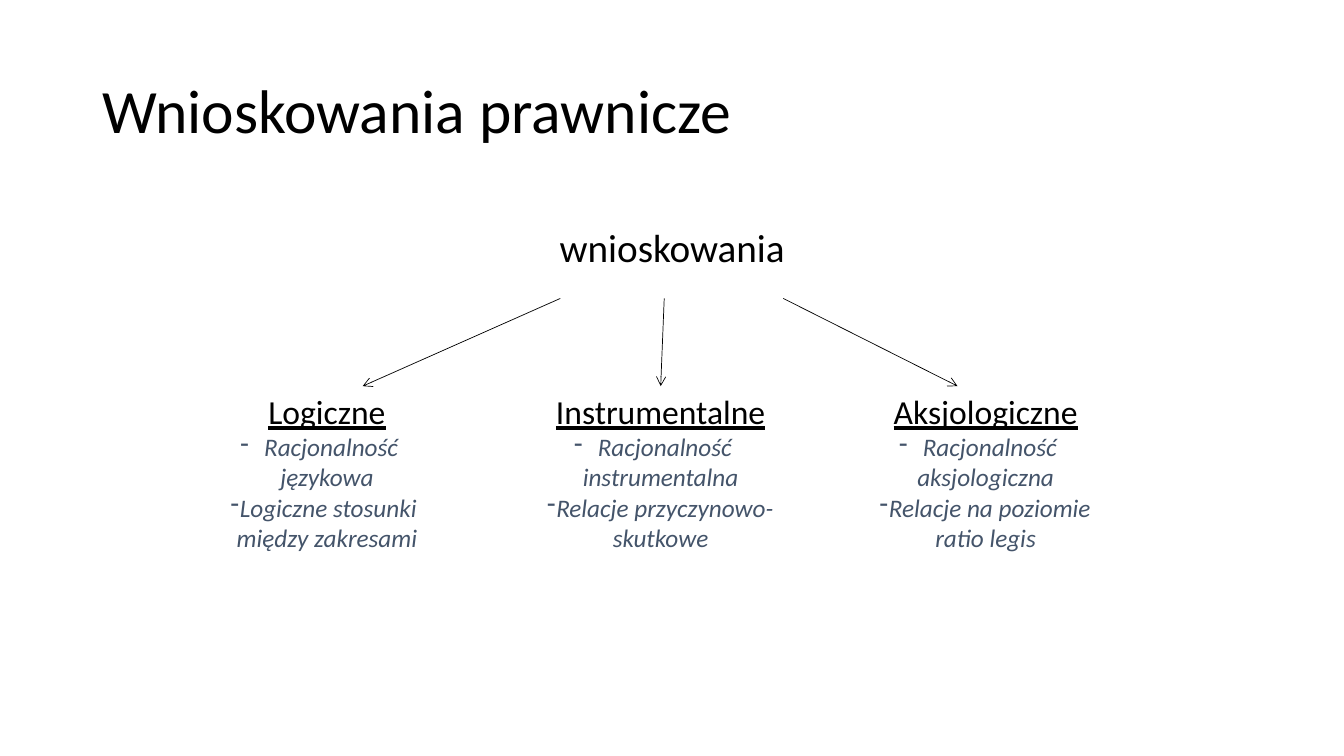
"""Build the slide on kinds of legal reasoning."""
import pptx
import pptx.util
import pptx.dml.color
import pptx.enum.shapes
import pptx.enum.text
import pptx.oxml
import pptx.oxml.ns

Cm, Pt = pptx.util.Cm, pptx.util.Pt
Align = pptx.enum.text.PP_ALIGN
Anchor = pptx.enum.text.MSO_ANCHOR
HUE = {"ink": "000000", "note": "44546A"}
NS = pptx.oxml.ns.nsdecls("a")

deck = pptx.Presentation()
deck.slide_width, deck.slide_height = Cm(33.87), Cm(19.05)
slide = deck.slides.add_slide(deck.slide_layouts[6])


def write(frame, text, size=18, hue="ink", align=Align.CENTER, line=None,
          under=False, slant=False, dash=False, first=False):
    """Write one paragraph into a text frame."""
    para = frame.paragraphs[0] if first else frame.add_paragraph()
    para.text, para.alignment = text, align
    if line:
        para.line_spacing = line
    if dash:
        para._p.get_or_add_pPr().append(
            pptx.oxml.parse_xml(f'<a:buChar {NS} char="-"/>'))
    for run in para.runs:
        font = run.font
        font.name, font.size = "Calibri", Pt(size)
        font.underline, font.italic = under, slant
        font.color.rgb = pptx.dml.color.RGBColor.from_string(HUE[hue])


title = slide.shapes.add_textbox(Cm(2.33), Cm(1.01), Cm(29.21), Cm(3.68)).text_frame
title.word_wrap, title.vertical_anchor = True, Anchor.MIDDLE
write(title, "Wnioskowania prawnicze", size=44, align=Align.LEFT, line=0.9, first=True)

root = slide.shapes.add_textbox(Cm(5.51), Cm(5.64), Cm(22.86), Cm(2.08)).text_frame
root.word_wrap = True
write(root, "wnioskowania", size=28, line=0.9, first=True)

kinds = [
    (5.56, 5.36, "Logiczne", "Racjonalność\njęzykowa",
     "Logiczne stosunki \nmiędzy zakresami", 14.12, 9.14),
    (13.54, 6.22, "Instrumentalne", "Racjonalność\ninstrumentalna",
     "Relacje przyczynowo-\nskutkowe", 16.74, None),
    (21.92, 5.84, "Aksjologiczne", "Racjonalność\naksjologiczna",
     "Relacje na poziomie\nratio legis", 19.74, 24.13),
]
top = 9.73
for left, width, name, basis, bond, start, end in kinds:
    box = slide.shapes.add_textbox(Cm(left), Cm(top), Cm(width), Cm(4.37))
    frame = box.text_frame
    frame.word_wrap = False
    frame.auto_size = pptx.enum.text.MSO_AUTO_SIZE.SHAPE_TO_FIT_TEXT
    write(frame, name, size=24, under=True, first=True)
    for note in (basis, bond):
        write(frame, note, hue="note", slant=True, dash=True)

    arrow = slide.shapes.add_connector(
        pptx.enum.shapes.MSO_CONNECTOR.STRAIGHT,
        Cm(start), Cm(7.52), Cm(end or left + width / 2), Cm(top))
    if end is None:
        arrow.end_connect(box, 0)
    arrow.line.width = Pt(0.5)
    arrow.line.color.rgb = pptx.dml.color.RGBColor.from_string(HUE["ink"])
    arrow.line._get_or_add_ln().append(
        pptx.oxml.parse_xml(f'<a:tailEnd {NS} type="arrow"/>'))
    arrow._element.spPr.append(pptx.oxml.parse_xml(f'<a:effectLst {NS}/>'))

deck.save("out.pptx")
